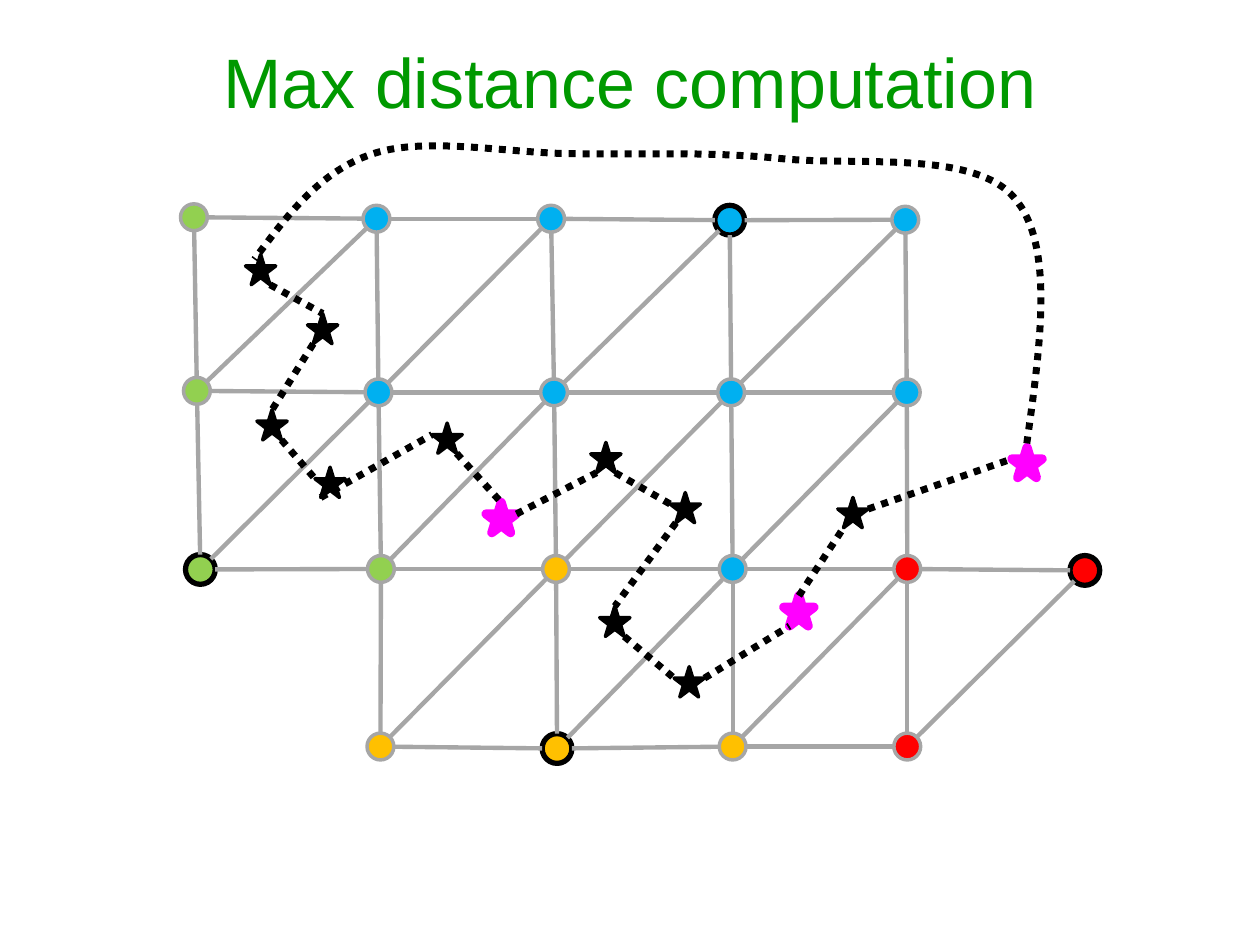
"""Build a slide with a coloured mesh crossed by a dotted loop of stars."""
from dataclasses import dataclass
from math import hypot
from typing import Any

from lxml import etree
from pptx import Presentation
from pptx.dml.color import RGBColor
from pptx.enum.dml import MSO_LINE
from pptx.enum.shapes import MSO_CONNECTOR, MSO_SHAPE
from pptx.enum.text import MSO_ANCHOR, PP_ALIGN
from pptx.oxml.ns import qn
from pptx.util import Cm, Pt

STRAIGHT = MSO_CONNECTOR.STRAIGHT
OVAL = MSO_SHAPE.OVAL
STAR = MSO_SHAPE.STAR_5_POINT
DOTS = MSO_LINE.ROUND_DOT
MIDDLE = MSO_ANCHOR.MIDDLE
CENTER = PP_ALIGN.CENTER


@dataclass(frozen=True)
class Theme:
    """Colours, type and line widths of the slide."""
    title: str = "009900"
    blue: str = "00B0F0"
    green: str = "92D050"
    gold: str = "FFC000"
    red: str = "FF0000"
    pink: str = "FF00FF"
    black: str = "000000"
    grey: str = "A6A6A6"
    font: str = "Arial"
    size: float = 40
    rim: float = 2
    bold_rim: float = 3
    pink_rim: float = 5.25
    edge: float = 2.5
    dots: float = 4


@dataclass(frozen=True)
class Node:
    """A mesh node by grid place, centre in cm and fill."""
    row: int
    col: int
    x: float
    y: float
    fill: str
    main: bool = False

    @property
    def half(self) -> float:
        """Give the radius in cm."""
        return 0.3 if self.main else 0.27


@dataclass(frozen=True)
class Stop:
    """A star on the loop with the tips where the path comes and goes."""
    x: float
    y: float
    come: str
    go: str
    pink: bool = False

    def tip(self, name: str) -> tuple[float, float]:
        """Give the place of a tip in cm."""
        across, down = TIPS[name]
        return self.x + across * SPAN, self.y + down * SPAN


THEME = Theme()
SPAN = 0.61
TIPS = {"top": (0.5, 0), "left": (0, 0.38), "right": (1, 0.38),
        "low left": (0.19, 1), "low right": (0.81, 1)}
STEPS = ((0, 1), (1, 0), (-1, 1))

NODES = [
    Node(0, 0, 3.91, 4.38, THEME.green),
    Node(0, 1, 7.59, 4.41, THEME.blue),
    Node(0, 2, 11.11, 4.41, THEME.blue),
    Node(0, 3, 14.71, 4.44, THEME.blue, True),
    Node(0, 4, 18.25, 4.43, THEME.blue),
    Node(1, 0, 3.97, 7.88, THEME.green),
    Node(1, 1, 7.63, 7.91, THEME.blue),
    Node(1, 2, 11.17, 7.91, THEME.blue),
    Node(1, 3, 14.74, 7.91, THEME.blue),
    Node(1, 4, 18.28, 7.91, THEME.blue),
    Node(2, 0, 4.04, 11.48, THEME.green, True),
    Node(2, 1, 7.68, 11.47, THEME.green),
    Node(2, 2, 11.21, 11.47, THEME.gold),
    Node(2, 3, 14.77, 11.47, THEME.blue),
    Node(2, 4, 18.29, 11.47, THEME.red),
    Node(2, 5, 21.87, 11.5, THEME.red, True),
    Node(3, 1, 7.67, 15.05, THEME.gold),
    Node(3, 2, 11.23, 15.09, THEME.gold, True),
    Node(3, 3, 14.77, 15.05, THEME.gold),
    Node(3, 4, 18.29, 15.05, THEME.red),
]

STOPS = [
    Stop(4.95, 5.13, "top", "low right"),
    Stop(6.2, 6.32, "top", "low left"),
    Stop(5.18, 8.26, "top", "low right"),
    Stop(6.35, 9.42, "left", "low left"),
    Stop(8.71, 8.53, "left", "low right"),
    Stop(9.8, 10.13, "top", "right", True),
    Stop(11.91, 8.92, "low left", "low right"),
    Stop(13.51, 9.93, "left", "low left"),
    Stop(12.09, 12.22, "top", "low right"),
    Stop(13.59, 13.44, "left", "right"),
    Stop(15.8, 12.01, "low left", "top", True),
    Stop(16.89, 10.03, "low left", "right"),
    Stop(20.4, 9.02, "left", "top", True),
]

LOOP = [(20.7, 8.94), (20.98, 6.93), (21.26, 4.93), (20.45, 3.99),
        (19.63, 3.02), (17.25, 3.35), (15.77, 3.2), (14.3, 3.05),
        (13, 3.12), (11.63, 3.1), (10.26, 3.1), (8.61, 2.74),
        (7.52, 3.1), (6.45, 3.45), (5.79, 4.34), (5.13, 5.23)]


def put(item: Any, values: dict[str, Any]) -> None:
    """Set each named value on the item."""
    for name, value in values.items():
        setattr(item, name, value)


def ink(line: Any, tint: str, width: float, dotted: bool = False) -> None:
    """Format a line."""
    line.color.rgb = RGBColor.from_string(tint)
    put(line, {"width": Pt(width), "dash_style": DOTS if dotted else None})


def mark(shapes: Any, kind: Any, box: tuple[float, float, float],
         fill: str, rim: str, width: float) -> None:
    """Draw a filled shape in a square box given in cm."""
    left, top, side = map(Cm, box)
    shape = shapes.add_shape(kind, left, top, side, side)
    shape.shadow.inherit = False
    shape.fill.solid()
    shape.fill.fore_color.rgb = RGBColor.from_string(fill)
    ink(shape.line, rim, width)


def link(shapes: Any, start: tuple[float, float], end: tuple[float, float],
         tint: str, width: float, dotted: bool = False) -> None:
    """Draw a straight line between two points in cm."""
    line = shapes.add_connector(STRAIGHT, *map(Cm, start + end))
    ink(line.line, tint, width, dotted)
    etree.SubElement(line.element.spPr, qn("a:effectLst"))


def join(shapes: Any, first: Node, last: Node) -> None:
    """Draw a mesh edge from rim to rim."""
    wide, high = last.x - first.x, last.y - first.y
    far = hypot(wide, high)
    out, back = first.half / far, last.half / far
    link(shapes, (first.x + wide * out, first.y + high * out),
         (last.x - wide * back, last.y - high * back), THEME.grey, THEME.edge)


def curve(shapes: Any, points: list[tuple[float, float]]) -> None:
    """Draw a dotted curve of cubic pieces."""
    spots = [(Cm(x), Cm(y)) for x, y in points]
    pen = shapes.build_freeform(*spots[0])
    pen.add_line_segments(spots[1:], close=False)
    shape = pen.convert_to_shape()
    shape.shadow.inherit = False
    shape.fill.background()
    ink(shape.line, THEME.black, THEME.dots, True)
    parts = list(shape.element.iter(qn("a:lnTo")))
    track = parts[0].getparent()
    for i in range(0, len(parts), 3):
        piece = etree.SubElement(track, qn("a:cubicBezTo"))
        for part in parts[i:i + 3]:
            piece.append(part[0])
            track.remove(part)


def head(shape: Any, text: str) -> None:
    """Fill and place the title."""
    put(shape, {"left": Cm(1.9), "top": Cm(0.03), "width": Cm(21.59), "height": Cm(3.17)})
    frame = shape.text_frame
    put(frame, {"text": text, "vertical_anchor": MIDDLE, "word_wrap": True})
    line = frame.paragraphs[0]
    line.alignment = CENTER
    font = line.runs[0].font
    put(font, {"name": THEME.font, "size": Pt(THEME.size)})
    font.color.rgb = RGBColor.from_string(THEME.title)


def main() -> None:
    """Build and save the slide."""
    deck = Presentation()
    put(deck, {"slide_width": Cm(25.4), "slide_height": Cm(19.05)})
    shapes = deck.slides.add_slide(deck.slide_layouts[5]).shapes
    head(shapes.title, "Max distance computation")
    for node in NODES:
        rim = (THEME.black, THEME.bold_rim) if node.main else (THEME.grey, THEME.rim)
        box = (node.x - node.half, node.y - node.half, 2 * node.half)
        mark(shapes, OVAL, box, node.fill, *rim)
    grid = {(node.row, node.col): node for node in NODES}
    for (row, col), node in grid.items():
        for down, right in STEPS:
            if other := grid.get((row + down, col + right)):
                join(shapes, node, other)
    for stop in STOPS:
        tint, width = (THEME.pink, THEME.pink_rim) if stop.pink else (THEME.black, THEME.rim)
        mark(shapes, STAR, (stop.x, stop.y, SPAN), tint, tint, width)
    for stop, after in zip(STOPS, STOPS[1:]):
        link(shapes, stop.tip(stop.go), after.tip(after.come), THEME.black, THEME.dots, True)
    curve(shapes, LOOP)
    deck.save("out.pptx")


if __name__ == "__main__":
    main()
